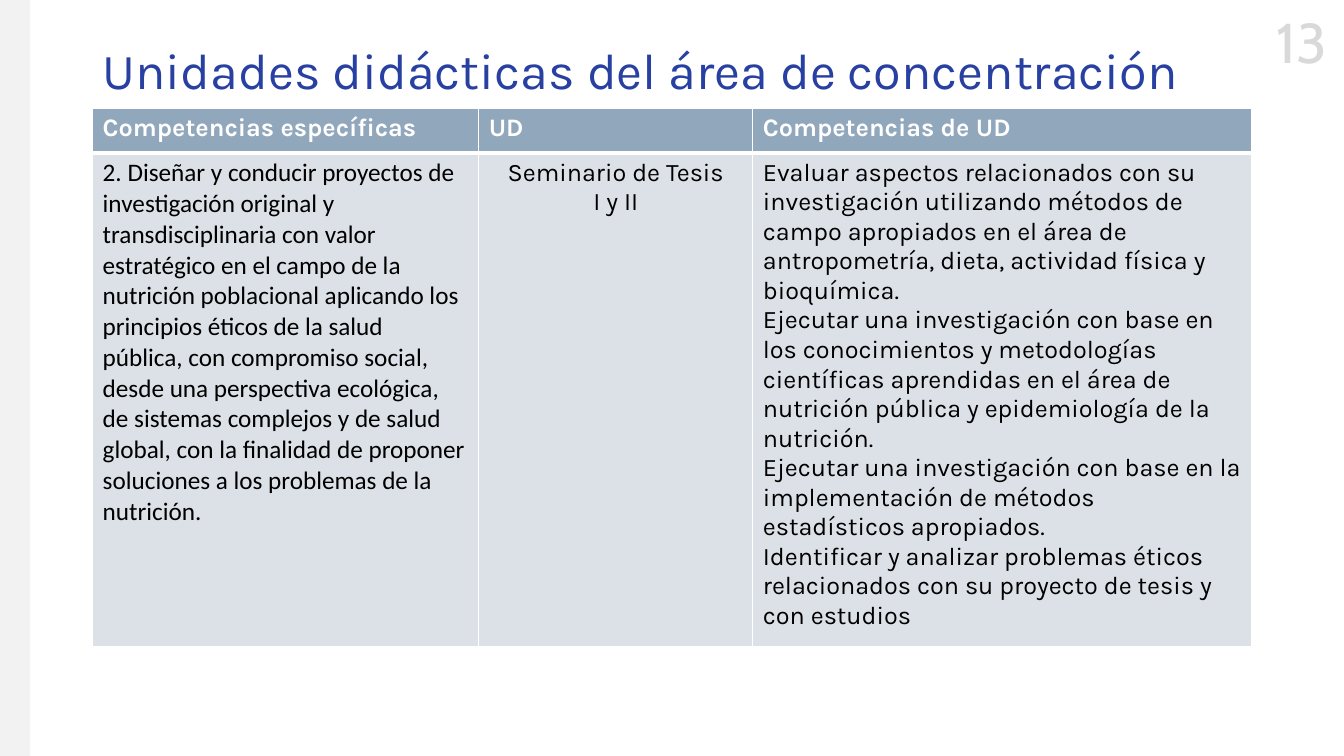
from lxml import etree
from pptx import Presentation
from pptx.dml.color import RGBColor
from pptx.enum.shapes import MSO_SHAPE
from pptx.enum.text import MSO_ANCHOR, PP_ALIGN
from pptx.oxml.ns import qn
from pptx.util import Pt

RECTANGLE = MSO_SHAPE.RECTANGLE
TOP, MIDDLE = MSO_ANCHOR.TOP, MSO_ANCHOR.MIDDLE
LEFT, CENTER = PP_ALIGN.LEFT, PP_ALIGN.CENTER

THEME = {
    "sidebar": "F2F2F2",
    "border": "FFFFFF",
    "header_fill": "91A7BC",
    "body_fill": "DCE1E7",
    "number": {"name": "Cabin", "size": 40, "color": "D9D9D9", "bold": False},
    "title": {"name": "Karla", "size": 36, "color": "2840A1", "bold": False},
    "header": {"name": "Karla", "size": 18, "color": "FFFFFF", "bold": True},
    "body": {"name": "Karla", "size": 18, "color": "000000", "bold": False},
    "competency": {"name": "Calibri", "size": 18, "color": "000000", "bold": False},
}


def write_text(frame, lines, style, alignment=LEFT, anchor=TOP, spacing=1.0):
    frame.word_wrap = True
    frame.vertical_anchor = anchor
    frame.text = "\n".join(lines)
    for paragraph in frame.paragraphs:
        paragraph.alignment = alignment
        paragraph.line_spacing = spacing
        font = paragraph.runs[0].font
        values = {"name": style["name"], "size": Pt(style["size"]), "bold": style["bold"]}
        for attribute, value in values.items():
            setattr(font, attribute, value)
        font.color.rgb = RGBColor.from_string(style["color"])


def add_borders(cell, widths):
    properties = cell._tc.get_or_add_tcPr()
    for side, width in widths.items():
        line = etree.SubElement(properties, qn(f"a:ln{side}"), w=str(Pt(width)))
        fill = etree.SubElement(line, qn("a:solidFill"))
        etree.SubElement(fill, qn("a:srgbClr"), val=THEME["border"])


presentation = Presentation()
presentation.slide_width = Pt(960)
presentation.slide_height = Pt(540)
slide = presentation.slides.add_slide(presentation.slide_layouts[6])

number_box = slide.shapes.add_textbox(Pt(902.9), Pt(1.5), Pt(54), Pt(55.5))
write_text(number_box.text_frame, ["13"], THEME["number"], CENTER)
number_box.text_frame.word_wrap = False

sidebar = slide.shapes.add_shape(RECTANGLE, 0, 0, Pt(21.6), Pt(540))
sidebar.shadow.inherit = False
sidebar.fill.solid()
sidebar.fill.fore_color.rgb = RGBColor.from_string(THEME["sidebar"])
sidebar.line.fill.background()

title_box = slide.shapes.add_textbox(Pt(66.2), Pt(28.8), Pt(828), Pt(47.5))
write_text(
    title_box.text_frame,
    ["Unidades didácticas del área de concentración"],
    THEME["title"],
    anchor=MIDDLE,
    spacing=0.9,
)

columns = [
    {
        "width": 275.8,
        "header": "Competencias específicas",
        "style": "competency",
        "alignment": LEFT,
        "lines": [
            "2. Diseñar y conducir proyectos de investigación original y transdisciplinaria "
            "con valor estratégico en el campo de la nutrición poblacional aplicando los "
            "principios éticos de la salud pública, con compromiso social, desde una "
            "perspectiva ecológica, de sistemas complejos y de salud global, con la "
            "finalidad de proponer soluciones a los problemas de la nutrición."
        ],
    },
    {
        "width": 195.8,
        "header": "UD",
        "style": "body",
        "alignment": CENTER,
        "lines": ["Seminario de Tesis", "I y II"],
    },
    {
        "width": 356.4,
        "header": "Competencias de UD",
        "style": "body",
        "alignment": LEFT,
        "lines": [
            "Evaluar aspectos relacionados con su investigación utilizando métodos de "
            "campo apropiados en el área de antropometría, dieta, actividad física y "
            "bioquímica.",
            "Ejecutar una investigación con base en los conocimientos y metodologías "
            "científicas aprendidas en el área de nutrición pública y epidemiología de la "
            "nutrición.",
            "Ejecutar una investigación con base en la implementación de métodos "
            "estadísticos apropiados.",
            "Identificar y analizar problemas éticos relacionados con su proyecto de tesis "
            "y con estudios",
        ],
    },
]
row_heights = [32, 346.5]

table = slide.shapes.add_table(
    len(row_heights), len(columns), Pt(66.2), Pt(77.2), Pt(828), Pt(sum(row_heights))
).table
for row, height in zip(table.rows, row_heights):
    row.height = Pt(height)

for index, column in enumerate(columns):
    table.columns[index].width = Pt(column["width"])
    header_cell, body_cell = table.cell(0, index), table.cell(1, index)
    write_text(header_cell.text_frame, [column["header"]], THEME["header"])
    write_text(
        body_cell.text_frame, column["lines"], THEME[column["style"]], column["alignment"]
    )
    add_borders(header_cell, {"L": 1, "R": 1, "T": 1, "B": 3})
    add_borders(body_cell, {"L": 1, "R": 1, "T": 3, "B": 1})
    for cell, color in ((header_cell, "header_fill"), (body_cell, "body_fill")):
        cell.fill.solid()
        cell.fill.fore_color.rgb = RGBColor.from_string(THEME[color])

presentation.save("out.pptx")
